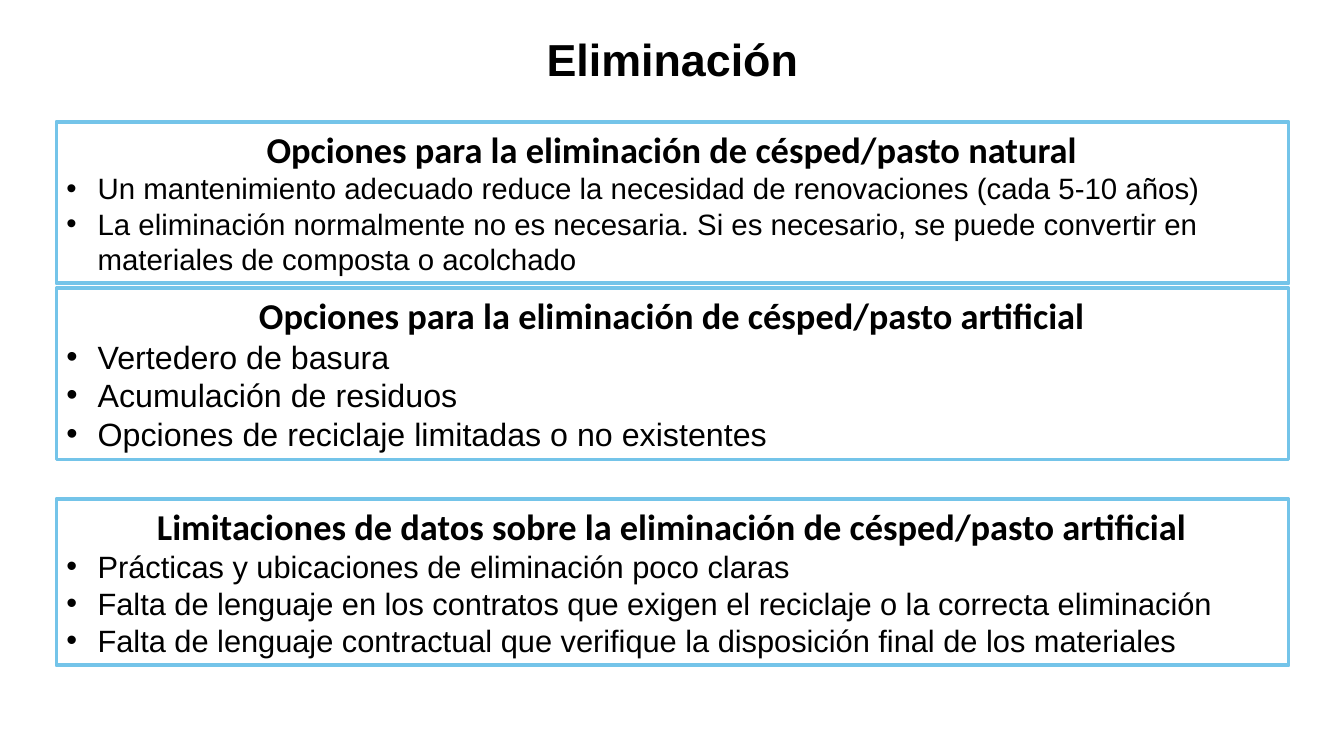
from lxml import etree
from pptx import Presentation
from pptx.dml import color
from pptx.enum import shapes, text
from pptx.oxml import ns
from pptx.util import Inches, Pt

PANEL_LEFT, PANEL_WIDTH = 0.56, 12.22
PANELS = [
    (1.21, 1.6, 21, "Opciones para la eliminación de césped/pasto natural", [
        "Un mantenimiento adecuado reduce la necesidad de renovaciones (cada 5-10 años)",
        "La eliminación normalmente no es necesaria. Si es necesario, se puede convertir en "
        "materiales de composta o acolchado",
    ]),
    (2.86, 1.7, 23, "Opciones para la eliminación de césped/pasto artificial", [
        "Vertedero de basura",
        "Acumulación de residuos",
        "Opciones de reciclaje limitadas o no existentes",
    ]),
    (4.95, 1.65, 22, "Limitaciones de datos sobre la eliminación de césped/pasto artificial", [
        "Prácticas y ubicaciones de eliminación poco claras",
        "Falta de lenguaje en los contratos que exigen el reciclaje o la correcta eliminación",
        "Falta de lenguaje contractual que verifique la disposición final de los materiales",
    ]),
]


def rgb(value):
    """Return the colour for a hex string."""
    return color.RGBColor.from_string(value)


def write(paragraph, words, size, font="Arial", bold=False, align=text.PP_ALIGN.LEFT):
    """Fill a paragraph with formatted text."""
    paragraph.alignment = align
    run = paragraph.add_run()
    run.text = words
    run.font.name = font
    run.font.size = Pt(size)
    run.font.bold = bold
    run.font.color.rgb = rgb("000000")


def add_bullet(paragraph, indent=0.31):
    """Give a paragraph a round bullet with a hanging indent."""
    properties = paragraph._p.get_or_add_pPr()
    properties.set("marL", str(Inches(indent)))
    properties.set("indent", str(-Inches(indent)))
    etree.SubElement(properties, ns.qn("a:buFont")).set("typeface", "Arial")
    etree.SubElement(properties, ns.qn("a:buChar")).set("char", "•")


def add_title(slide, left, top, width, height):
    """Place and format the slide title."""
    title = slide.shapes.title
    title.left, title.top = Inches(left), Inches(top)
    title.width, title.height = Inches(width), Inches(height)
    frame = title.text_frame
    frame.auto_size = text.MSO_AUTO_SIZE.SHAPE_TO_FIT_TEXT
    frame.vertical_anchor = text.MSO_ANCHOR.TOP
    write(frame.paragraphs[0], "Eliminación", 32, bold=True, align=text.PP_ALIGN.CENTER)


def add_panel(slide, left, top, width, height, size, heading, points):
    """Draw an outlined panel with a heading and bullet points."""
    panel = slide.shapes.add_shape(
        shapes.MSO_SHAPE.RECTANGLE, Inches(left), Inches(top), Inches(width), Inches(height))
    panel.shadow.inherit = False
    panel.fill.background()
    panel.line.color.rgb = rgb("74C4E9")
    panel.line.width = Pt(2.75)
    frame = panel.text_frame
    frame.word_wrap = True
    frame.auto_size = text.MSO_AUTO_SIZE.SHAPE_TO_FIT_TEXT
    frame.vertical_anchor = text.MSO_ANCHOR.TOP
    write(frame.paragraphs[0], heading, 26, font="Calibri", bold=True,
          align=text.PP_ALIGN.CENTER)
    for point in points:
        paragraph = frame.add_paragraph()
        write(paragraph, point, size)
        add_bullet(paragraph)


def main():
    """Build the slide and save the presentation."""
    presentation = Presentation()
    presentation.slide_width = Inches(13.33)
    presentation.slide_height = Inches(7.5)
    slide = presentation.slides.add_slide(presentation.slide_layouts.get_by_name("Title Only"))
    add_title(slide, 2.97, 0.26, 7.4, 0.64)
    for top, height, size, heading, points in PANELS:
        add_panel(slide, PANEL_LEFT, top, PANEL_WIDTH, height, size, heading, points)
    presentation.save("out.pptx")


if __name__ == "__main__":
    main()
